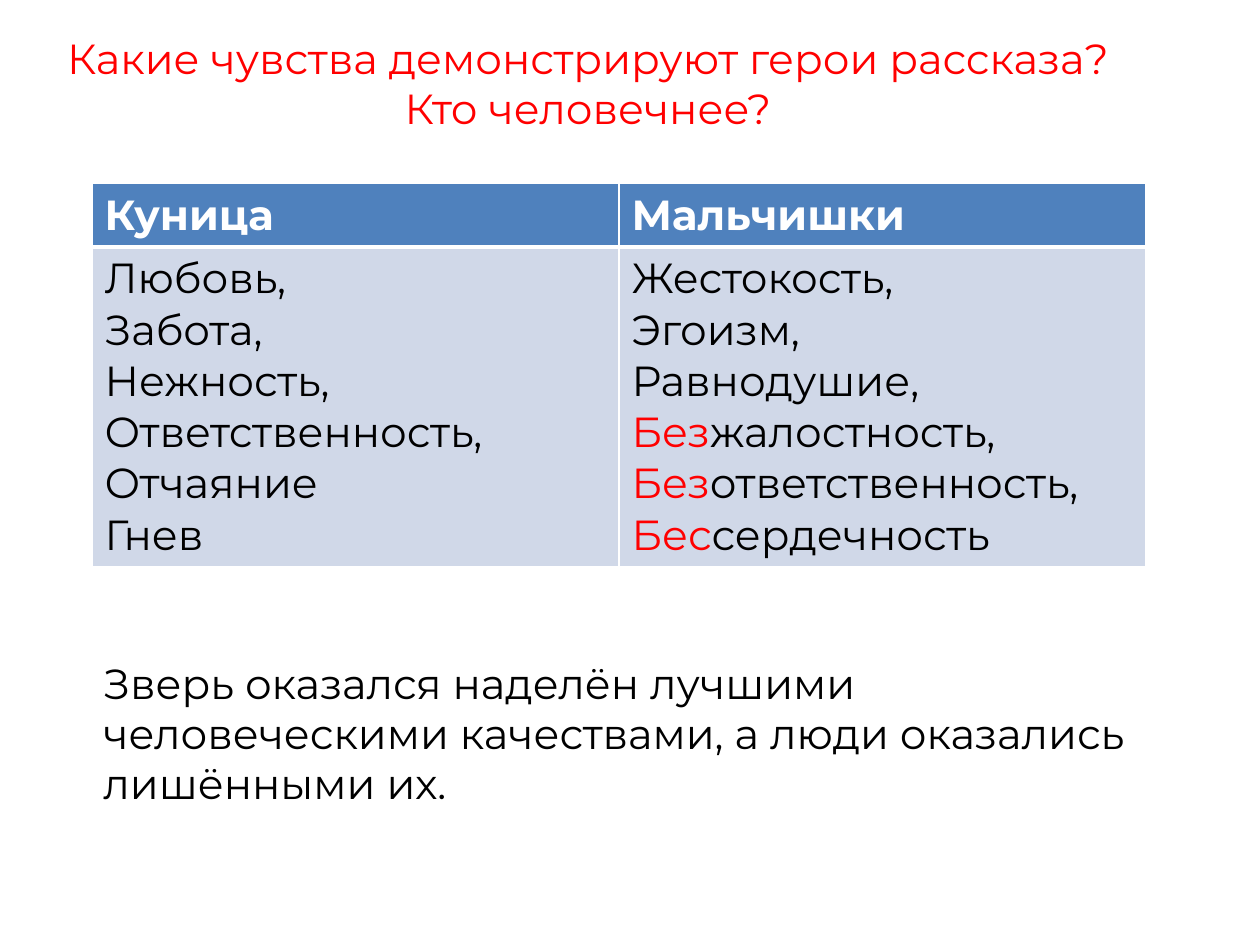
from pptx import Presentation, util as u
from pptx.dml.color import RGBColor
from pptx.enum import text
from pptx.oxml import parse_xml
from pptx.oxml.ns import nsdecls

RED, BLACK, WHITE = "FF0000", "000000", "FFFFFF"
HEADER_FILL, BODY_FILL = "4F81BD", "D0D8E8"


def px(n):
    return u.Emu(round(n * 914400 / 126))


def rgb(value):
    return RGBColor.from_string(value)


class Deck:
    font, size = "Montserrat", 24

    def __init__(self, width, height):
        self.prs = Presentation()
        self.prs.slide_width, self.prs.slide_height = px(width), px(height)
        self.s = self.prs.slides.add_slide(self.prs.slide_layouts[5])

    def add_lines(self, tf, lines, color, bold=False, align=text.PP_ALIGN.LEFT):
        """Add one paragraph per line; a (prefix, rest) pair gets a red prefix."""
        for i, line in enumerate(lines):
            p = tf.add_paragraph() if i else tf.paragraphs[0]
            p.alignment = align
            p.font.name, p.font.size, p.font.bold = self.font, u.Pt(self.size), bold
            p.font.color.rgb = rgb(color)
            parts = (line,) if isinstance(line, str) else line
            for part in parts:
                p.add_run().text = part
            if len(parts) > 1:
                p.runs[0].font.color.rgb = rgb(RED)

    def frame(self, sp):
        tf = sp.text_frame
        tf.word_wrap = True
        tf.auto_size = text.MSO_AUTO_SIZE.NONE
        tf.vertical_anchor = text.MSO_ANCHOR.TOP
        return tf

    def title(self, box, lines, color):
        sp = self.s.shapes.title
        sp.left, sp.top, sp.width, sp.height = map(px, box)
        self.add_lines(self.frame(sp), lines, color, align=text.PP_ALIGN.CENTER)

    def textbox(self, box, lines, color):
        sp = self.s.shapes.add_textbox(*map(px, box))
        self.add_lines(self.frame(sp), lines, color)

    def borders(self, cell, bottom):
        tc_pr = cell._tc.get_or_add_tcPr()
        for side, width in (("L", 1), ("R", 1), ("T", 1), ("B", bottom)):
            tc_pr.append(parse_xml(
                f'<a:ln{side} {nsdecls("a")} w="{u.Pt(width)}"><a:solidFill>'
                f'<a:srgbClr val="{WHITE}"/></a:solidFill></a:ln{side}>'))

    def table(self, box, row_heights, columns):
        """Each column is a (heading, lines) pair."""
        tbl = self.s.shapes.add_table(2, len(columns), *map(px, box)).table
        for row, height in zip(tbl.rows, row_heights):
            row.height = px(height)
        for c, (heading, lines) in enumerate(columns):
            rows = (([heading], WHITE, True, HEADER_FILL, 3),
                    (lines, BLACK, False, BODY_FILL, 1))
            for r, (content, color, bold, fill, bottom) in enumerate(rows):
                cell = tbl.cell(r, c)
                self.borders(cell, bottom)
                cell.fill.solid()
                cell.fill.fore_color.rgb = rgb(fill)
                self.add_lines(cell.text_frame, content, color, bold)


def main():
    deck = Deck(1260, 945)
    deck.title((34, 26, 1108, 115),
               ["Какие чувства демонстрируют герои рассказа?", "Кто человечнее?"], RED)
    deck.table((92, 183, 1054, 383), (63, 320), [
        ("Куница", ["Любовь,", "Забота,", "Нежность,", "Ответственность,",
                    "Отчаяние", "Гнев"]),
        ("Мальчишки", ["Жестокость,", "Эгоизм,", "Равнодушие,",
                       ("Без", "жалостность,"), ("Без", "ответственность,"),
                       ("Бес", "сердечность")]),
    ])
    deck.textbox((91, 651, 1101, 165),
                 ["Зверь оказался наделён лучшими человеческими качествами, "
                  "а люди оказались лишёнными их."], BLACK)
    deck.prs.save("out.pptx")


if __name__ == "__main__":
    main()
